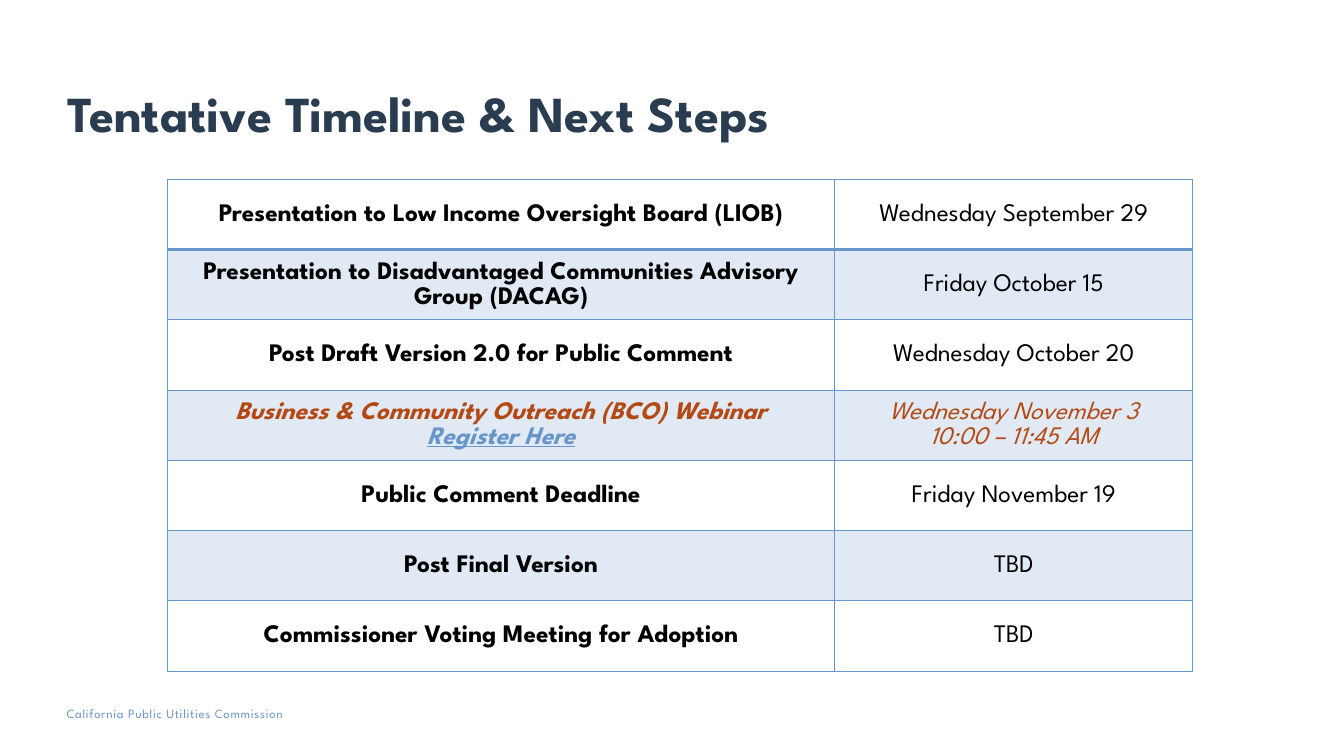
from typing import NamedTuple

from lxml.etree import SubElement
from pptx import Presentation
from pptx.dml.color import RGBColor
from pptx.enum.text import MSO_ANCHOR, PP_ALIGN
from pptx.oxml.ns import qn
from pptx.util import Inches, Pt

FONT = "League Spartan"
NAVY = RGBColor(0x2A, 0x3C, 0x50)
BLUE = RGBColor(0x69, 0x96, 0xC9)
RUST = RGBColor(0xB4, 0x49, 0x15)
BLACK = RGBColor(0, 0, 0)

WIDTH, HEIGHT = Inches(13.33), Inches(7.5)
LEFT, TOP = Inches(1.66), Inches(1.78)
COLS = (Inches(6.62), Inches(3.55))
ROW = Inches(4.88 / 7)


class Step(NamedTuple):
    name: str
    date: str
    link: str = ""
    time: str = ""
    key: bool = False


STEPS = (
    Step("Presentation to Low Income Oversight Board (LIOB)", "Wednesday September 29"),
    Step("Presentation to Disadvantaged Communities Advisory Group (DACAG)",
         "Friday October 15"),
    Step("Post Draft Version 2.0 for Public Comment", "Wednesday October 20"),
    Step("Business & Community Outreach (BCO) Webinar", "Wednesday November 3",
         "Register Here", "10:00 – 11:45 AM", True),
    Step("Public Comment Deadline", "Friday November 19"),
    Step("Post Final Version", "TBD"),
    Step("Commissioner Voting Meeting for Adoption", "TBD"),
)


def write(frame, text: str, *, size: float = 18, color: RGBColor = BLACK,
          bold: bool = False, italic: bool = False, under: bool = False,
          align=PP_ALIGN.LEFT, lead: float = 1.0, track: int = 0) -> None:
    """Fill the first paragraph of the frame, or add one if it is taken."""
    para = frame.paragraphs[0]
    if para.runs:
        para = frame.add_paragraph()
    para.alignment, para.line_spacing = align, lead
    run = para.add_run()
    run.text = text
    font = run.font
    font.name, font.size = FONT, Pt(size)
    font.bold, font.italic, font.underline = bold, italic, under
    font.color.rgb = color
    if track:
        font._element.set("spc", str(track))


def add_box(slide, left: float, top: float, width: float, height: float,
            pads: tuple = (0, 0, 0, 0), anchor=MSO_ANCHOR.TOP):
    box = slide.shapes.add_textbox(*map(Inches, (left, top, width, height)))
    frame = box.text_frame
    frame.word_wrap, frame.vertical_anchor = True, anchor
    (frame.margin_left, frame.margin_top,
     frame.margin_right, frame.margin_bottom) = map(Inches, pads)
    return frame


def paint(cell, band: bool, base: float) -> None:
    """Set the tint and the four borders; base is the bottom width in points."""
    props = cell._tc.get_or_add_tcPr()
    if band:
        cell.fill.solid()
        cell.fill.fore_color.rgb = BLUE
        tint = props.find(qn("a:solidFill")).find(qn("a:srgbClr"))
        SubElement(tint, qn("a:alpha"), val="20000")
    else:
        cell.fill.background()
    for spot, (side, width) in enumerate(zip("LRTB", (1, 1, 1, base))):
        line = SubElement(props, qn(f"a:ln{side}"), w=str(Pt(width)))
        fill = SubElement(line, qn("a:solidFill"))
        SubElement(fill, qn("a:srgbClr"), val=str(BLUE))
        props.insert(spot, line)


def add_steps(slide) -> None:
    table = slide.shapes.add_table(len(STEPS), len(COLS), LEFT, TOP,
                                   sum(COLS), ROW * len(STEPS)).table
    table.first_row = table.horz_banding = False
    for col, width in zip(table.columns, COLS):
        col.width = width
    for row, step in enumerate(STEPS):
        table.rows[row].height = ROW
        tone = RUST if step.key else BLACK
        pairs = ((step.name, step.link, BLUE), (step.date, step.time, tone))
        for col, (head, tail, hue) in enumerate(pairs):
            cell = table.cell(row, col)
            cell.vertical_anchor = MSO_ANCHOR.MIDDLE
            cell.margin_left = cell.margin_right = Inches(0.07)
            cell.margin_top = cell.margin_bottom = 0
            paint(cell, row % 2 == 1, 2 if row == 0 else 1)
            style = dict(bold=col == 0, italic=step.key,
                         align=PP_ALIGN.CENTER, lead=1.07)
            write(cell.text_frame, head, color=tone, **style)
            if tail:
                write(cell.text_frame, tail, color=hue, under=col == 0, **style)


def main() -> None:
    deck = Presentation()
    deck.slide_width, deck.slide_height = WIDTH, HEIGHT
    slide = deck.slides.add_slide(deck.slide_layouts[6])
    write(add_box(slide, 0.66, 7, 3.21, 0.15),
          "California Public Utilities Commission", size=9, color=BLUE, track=50)
    title = add_box(slide, 0.67, 0.4, 12, 1.07, (0, 0.05, 0.1, 0.05),
                    MSO_ANCHOR.BOTTOM)
    write(title, "Tentative Timeline & Next Steps", size=36, color=NAVY,
          bold=True, lead=0.9)
    add_steps(slide)
    deck.save("out.pptx")


if __name__ == "__main__":
    main()
